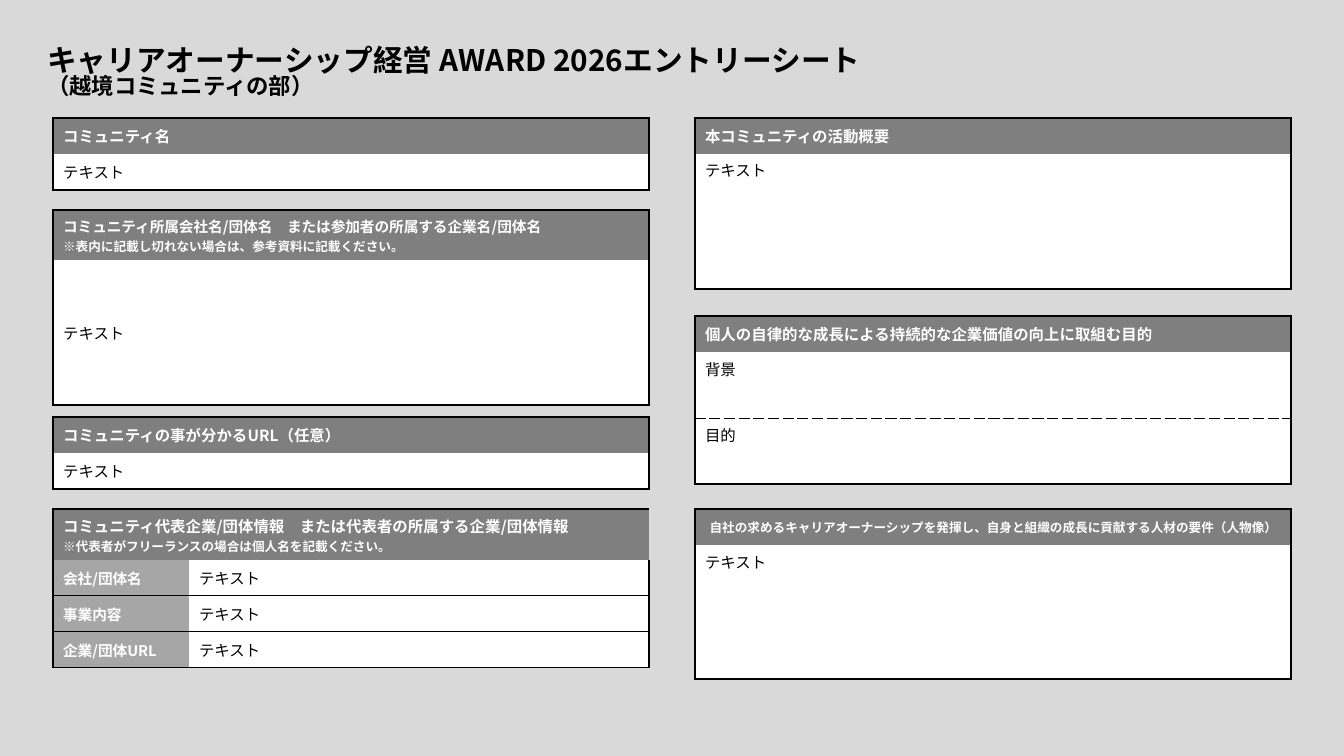
from pptx import Presentation, util as u
from pptx.dml.color import RGBColor
from pptx.enum import text
from pptx.oxml.ns import qn
from lxml import etree

BLACK = RGBColor(0, 0, 0)
WHITE = RGBColor(255, 255, 255)
PAGE = RGBColor(0xD9, 0xD9, 0xD9)
HEAD = RGBColor(0x7F, 0x7F, 0x7F)
LABEL = RGBColor(0xA6, 0xA6, 0xA6)
FONT = "Noto Sans CJK JP"
TOP, MID = text.MSO_ANCHOR.TOP, text.MSO_ANCHOR.MIDDLE


def px(n):
    return u.Emu(round(n * 914400 / 100.8))


class Sheet:
    """Style and current slide of the entry form."""
    wide = 596   # table width
    row = 36     # plain row height

    def __init__(self, deck):
        self.slide = deck.slides.add_slide(deck.slide_layouts[5])
        fill = self.slide.background.fill
        fill.solid()
        fill.fore_color.rgb = PAGE

    def label(self, frame, lines, color, bold, align=text.PP_ALIGN.LEFT):
        """Fill a frame with (wording, size) lines."""
        for i, (words, size) in enumerate(lines):
            para = frame.add_paragraph() if i else frame.paragraphs[0]
            para.text = words
            para.alignment = align
            font = para.font
            font.size, font.bold, font.name = u.Pt(size), bold, FONT
            font.color.rgb = color
            base = para._p.pPr.find(qn("a:defRPr"))
            etree.SubElement(base, qn("a:ea"), typeface=FONT)

    def title(self, x, y, w, h, lines):
        box = self.slide.shapes.title
        box.left, box.top, box.width, box.height = map(px, (x, y, w, h))
        frame = box.text_frame
        frame.word_wrap = False
        frame.auto_size = text.MSO_AUTO_SIZE.NONE
        frame.vertical_anchor = TOP
        self.label(frame, lines, BLACK, True)
        for para in frame.paragraphs:
            para.line_spacing = 0.8

    def edge(self, cell, side, width, dash):
        """Draw one cell border; width 0 hides it."""
        prop = cell._tc.get_or_add_tcPr()
        line = etree.SubElement(prop, qn("a:ln" + side), w=str(u.Pt(width)))
        if not width:
            etree.SubElement(line, qn("a:noFill"))
            return
        fill = etree.SubElement(line, qn("a:solidFill"))
        etree.SubElement(fill, qn("a:srgbClr"), val=str(BLACK))
        etree.SubElement(line, qn("a:prstDash"), val=dash)

    def table(self, x, y, head, rows, tall, anchor=MID, cols=(wide,),
              head_h=row, align=text.PP_ALIGN.LEFT, dash="solid"):
        """Header row over body rows, all body rows of one height."""
        last, end = len(rows), len(cols) - 1
        grid = self.slide.shapes.add_table(
            last + 1, end + 1, px(x), px(y), px(self.wide),
            px(head_h + tall * last)).table
        for col, w in zip(grid.columns, cols):
            col.width = px(w)
        for r, line in enumerate(grid.rows):
            line.height = px(tall if r else head_h)
            for c, cell in enumerate(line.cells):
                # Outer frame 1 pt, hairline between body rows
                above = 1 if r == 0 else 0.5 if r > 1 else 0
                below = 1 if r == last else 0.5 if r else 0
                self.edge(cell, "L", int(c == 0), "solid")
                self.edge(cell, "R", int(c == end), "solid")
                self.edge(cell, "T", above, dash if r > 1 else "solid")
                self.edge(cell, "B", below, dash if r < last else "solid")
                side = r > 0 and c < end
                cell.fill.solid()
                cell.fill.fore_color.rgb = (
                    HEAD if r == 0 else LABEL if side else WHITE)
                cell.vertical_anchor = anchor if r else MID
                if r:
                    self.label(cell.text_frame,
                               [(rows[r - 1][c], 10.5 if side else 11)],
                               WHITE if side else BLACK, side)
        first = grid.cell(0, 0)
        if end:
            first.merge(grid.cell(0, end))
        self.label(first.text_frame, head, WHITE, True, align)


def main():
    deck = Presentation()
    deck.slide_width, deck.slide_height = px(1344), px(756)
    form = Sheet(deck)
    left, right, body = 53, 695, [["テキスト"]]

    form.title(37, 44, 854, 73, [
        ("キャリアオーナーシップ経営 AWARD 2026エントリーシート", 21.2),
        ("（越境コミュニティの部）", 16)])

    # Left column: the community and its lead company
    form.table(left, 118, [("コミュニティ名", 11)], body, 36)
    form.table(left, 210, [
        ("コミュニティ所属会社名/団体名　または参加者の所属する企業名/団体名", 10.5),
        ("※表内に記載し切れない場合は、参考資料に記載ください。", 9)],
        body, 145, head_h=50)
    form.table(left, 417, [("コミュニティの事が分かるURL（任意）", 11)], body, 36)
    form.table(left, 509, [
        ("コミュニティ代表企業/団体情報　または代表者の所属する企業/団体情報", 11),
        ("※代表者がフリーランスの場合は個人名を記載ください。", 9)],
        [[name, "テキスト"] for name in
         ("会社/団体名", "事業内容", "企業/団体URL")],
        36, cols=(136, 460), head_h=50)

    # Right column: activity, purpose and people
    form.table(right, 118, [("本コミュニティの活動概要", 11)], body, 135, TOP)
    form.table(right, 316, [
        ("個人の自律的な成長による持続的な企業価値の向上に取組む目的", 11)],
        [["背景"], ["目的"]], 66, TOP, dash="sysDash")
    form.table(right, 509, [
        ("自社の求めるキャリアオーナーシップを発揮し、"
         "自身と組織の成長に貢献する人材の要件（人物像）", 9)],
        body, 134, TOP, align=text.PP_ALIGN.CENTER)

    deck.save("out.pptx")


if __name__ == "__main__":
    main()
